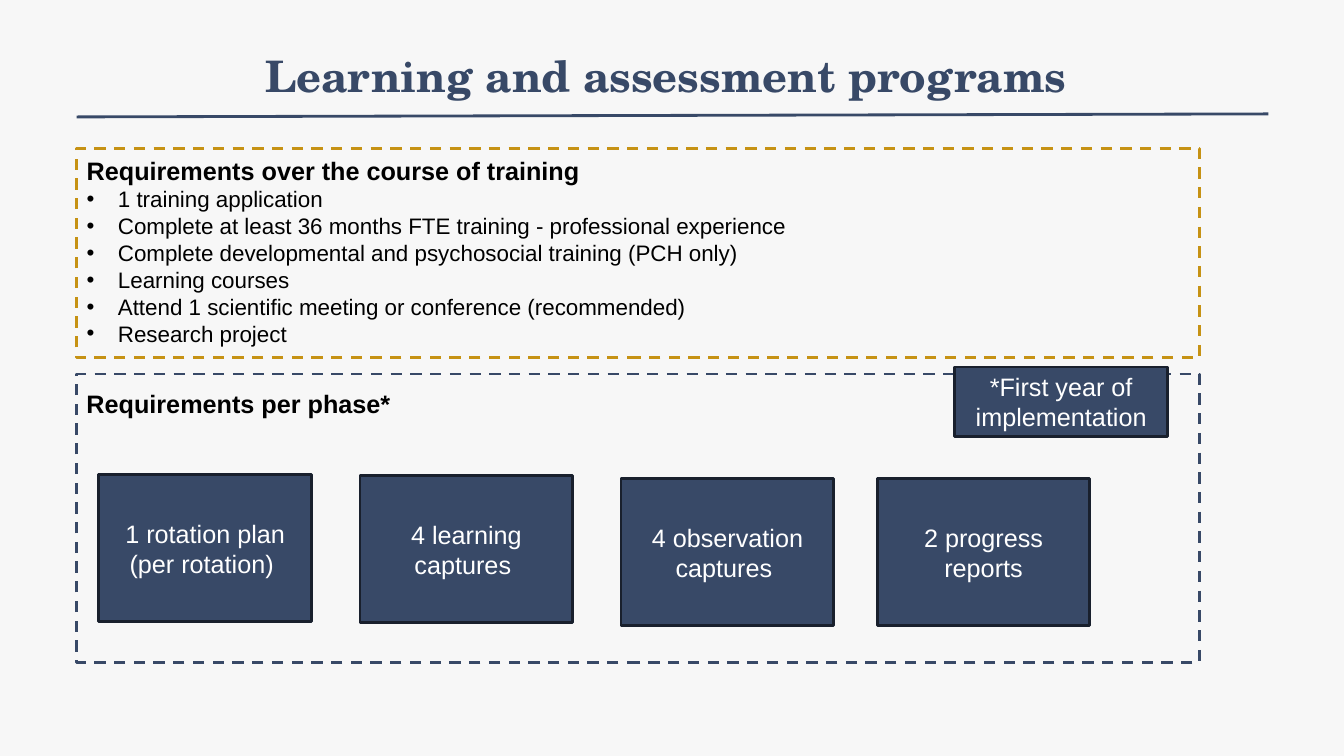
from lxml import etree
from pptx import Presentation
from pptx.dml import color
from pptx.enum import dml, shapes, text
from pptx.oxml import ns
from pptx.util import Inches, Pt

NAVY, GOLD, EDGE = "384967", "C69214", "19202D"
BLACK, WHITE, PAPER = "000000", "FFFFFF", "F7F7F7"
CARD_WIDTH, CARD_HEIGHT = 2.11, 1.46
MARGIN, PANEL_WIDTH = 0.76, 11.14

REQUIREMENTS = [
    "1 training application",
    "Complete at least 36 months FTE training - professional experience",
    "Complete developmental and psychosocial training (PCH only)",
    "Learning courses",
    "Attend 1 scientific meeting or conference (recommended)",
    "Research project",
]
CARDS = [
    ("1 rotation plan (per rotation) ", 0.98, 4.71),
    ("4 learning captures ", 3.57, 4.72),
    ("4 observation captures ", 6.16, 4.75),
    ("2 progress reports", 8.7, 4.75),
]


def rgb(value):
    return color.RGBColor.from_string(value)


def place(shape, left, top, width, height):
    shape.left, shape.top = Inches(left), Inches(top)
    shape.width, shape.height = Inches(width), Inches(height)


def style(para, size, ink, bold=False, face="Arial"):
    para.font.name, para.font.size, para.font.bold = face, Pt(size), bold
    para.font.color.rgb = rgb(ink)


def set_bullet(para, indent, symbol=None):
    props = para._p.get_or_add_pPr()
    props.set("marL", str(Inches(indent)))
    props.set("indent", str(-Inches(indent)))
    if symbol:
        etree.SubElement(props, ns.qn("a:buChar")).set("char", symbol)
    else:
        etree.SubElement(props, ns.qn("a:buNone"))


def add_title(page, words):
    title = page.shapes.title
    place(title, 1.66, 0.29, 10.01, 0.91)
    frame = title.text_frame
    frame.text = words
    frame.auto_size = text.MSO_AUTO_SIZE.NONE
    frame.vertical_anchor = text.MSO_ANCHOR.MIDDLE
    frame.margin_left = frame.margin_right = Inches(0.07)
    frame.margin_top = frame.margin_bottom = Inches(0.04)
    para = frame.paragraphs[0]
    para.alignment = text.PP_ALIGN.CENTER
    style(para, 31, NAVY, True, "TeX Gyre Schola")


def add_rule(page):
    rule = page.shapes.add_connector(
        shapes.MSO_CONNECTOR.STRAIGHT,
        Inches(MARGIN), Inches(1.16), Inches(12.58), Inches(1.13))
    rule.line.color.rgb = rgb(NAVY)
    rule.line.width = Pt(2)
    etree.SubElement(rule._element.spPr, ns.qn("a:effectLst"))


def add_rectangle(page, left, top, width, height, edge):
    box = page.shapes.add_shape(
        shapes.MSO_SHAPE.RECTANGLE,
        Inches(left), Inches(top), Inches(width), Inches(height))
    box.shadow.inherit = False
    box.line.color.rgb = rgb(edge)
    box.line.width = Pt(2)
    return box


def add_panel(page, top, height, edge):
    panel = add_rectangle(page, MARGIN, top, PANEL_WIDTH, height, edge)
    panel.fill.background()
    panel.line.dash_style = dml.MSO_LINE.DASH


def add_card(page, words, left, top, height=CARD_HEIGHT):
    card = add_rectangle(page, left, top, CARD_WIDTH, height, EDGE)
    card.fill.solid()
    card.fill.fore_color.rgb = rgb(NAVY)
    frame = card.text_frame
    frame.text = words
    frame.word_wrap = True
    frame.vertical_anchor = text.MSO_ANCHOR.MIDDLE
    para = frame.paragraphs[0]
    para.alignment = text.PP_ALIGN.CENTER
    style(para, 18, WHITE)


def add_requirements(page, heading, items):
    body = page.placeholders[1]
    place(body, MARGIN, 1.49, 9.84, 2.02)
    frame = body.text_frame
    frame.text = "\n".join([heading, *items])
    frame.auto_size = text.MSO_AUTO_SIZE.NONE
    for index, para in enumerate(frame.paragraphs):
        para.space_before = Pt(0)
        if index == 0:
            set_bullet(para, 0)
            style(para, 18, BLACK, True)
        else:
            set_bullet(para, 0.31, "•")
            style(para, 16, BLACK)


def add_heading(page, words):
    box = page.shapes.add_textbox(
        Inches(MARGIN), Inches(3.8), Inches(6.67), Inches(0.4))
    box.text_frame.word_wrap = True
    box.text_frame.text = words
    style(box.text_frame.paragraphs[0], 18, BLACK, True)


def main():
    deck = Presentation()
    deck.slide_width, deck.slide_height = Inches(13.33), Inches(7.5)
    page = deck.slides.add_slide(deck.slide_layouts[1])
    page.background.fill.solid()
    page.background.fill.fore_color.rgb = rgb(PAPER)

    add_title(page, "Learning and assessment programs ")
    add_rule(page)
    add_panel(page, 1.47, 2.08, GOLD)
    add_requirements(page, "Requirements over the course of training", REQUIREMENTS)
    add_panel(page, 3.71, 2.86, NAVY)
    add_heading(page, "Requirements per phase*")
    for words, left, top in CARDS:
        add_card(page, words, left, top)
    add_card(page, "*First year of implementation", 9.47, 3.64, 0.69)
    deck.save("out.pptx")


if __name__ == "__main__":
    main()
